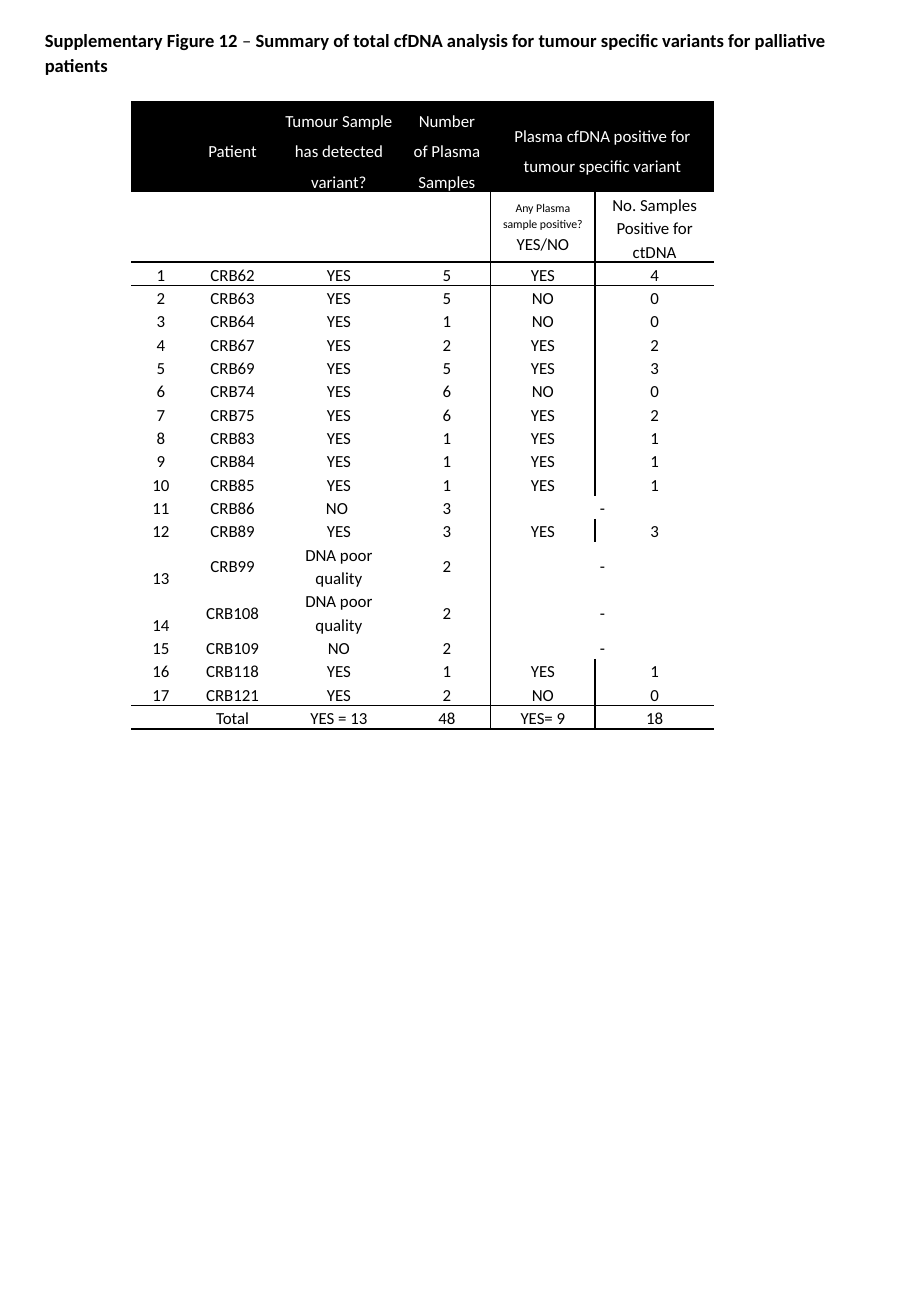
"""Build the supplementary table of cfDNA results for palliative patients."""
from lxml.etree import SubElement
from pptx import Presentation
from pptx.dml.color import RGBColor
from pptx.enum.text import MSO_ANCHOR as Anchor, MSO_AUTO_SIZE as AutoSize, PP_ALIGN as Align
from pptx.oxml.ns import qn
from pptx.util import Inches, Pt

BLACK = RGBColor(0x00, 0x00, 0x00)
WHITE = RGBColor(0xFF, 0xFF, 0xFF)
FONT = "Calibri"
NO_STYLE = "{2D5ABB26-0587-4C30-8999-92F81FD0307C}"

TITLE = [
    ("Supplementary Figure 12 ", True),
    ("– ", False),
    ("Summary of total cfDNA analysis for tumour specific variants for palliative patients", True),
]
COLUMN_WIDTHS = [0.49, 0.69, 1.06, 0.72, 0.86, 0.98]
HEADER_HEIGHT = 0.29
PATIENT_HEIGHT = 0.16
HEADINGS = ["", "Patient", "Tumour Sample has detected variant?",
            "Number of Plasma Samples", "Plasma cfDNA positive for tumour specific variant", None]
SUBHEADINGS = ["", "", "", "", "Any Plasma sample positive?\nYES/NO",
               "No. Samples Positive for ctDNA"]
PATIENTS = [
    ("CRB62", "YES", "5", "YES", "4"),
    ("CRB63", "YES", "5", "NO", "0"),
    ("CRB64", "YES", "1", "NO", "0"),
    ("CRB67", "YES", "2", "YES", "2"),
    ("CRB69", "YES", "5", "YES", "3"),
    ("CRB74", "YES", "6", "NO", "0"),
    ("CRB75", "YES", "6", "YES", "2"),
    ("CRB83", "YES", "1", "YES", "1"),
    ("CRB84", "YES", "1", "YES", "1"),
    ("CRB85", "YES", "1", "YES", "1"),
    ("CRB86", "NO ", "3", "-", None),
    ("CRB89", "YES", "3", "YES", "3"),
    ("CRB99", "DNA poor quality", "2", "-", None),
    ("CRB108", "DNA poor quality", "2", "-", None),
    ("CRB109", "NO", "2", "-", None),
    ("CRB118", "YES", "1", "YES", "1"),
    ("CRB121", "YES", "2", "NO", "0"),
]
TOTALS = ["", "Total", "YES = 13", "48", "YES= 9", "18"]
RESULT_COLUMN = 4


def style_run(run, size, color, bold=False):
    """Set the font of one run."""
    run.font.name = FONT
    run.font.size = Pt(size)
    run.font.color.rgb = color
    run.font.bold = bold


def add_title(slide):
    """Add the figure title."""
    title = slide.shapes.add_textbox(Inches(0.27), Inches(0.16), Inches(6.65), Inches(0.51))
    title.text_frame.word_wrap = True
    title.text_frame.auto_size = AutoSize.SHAPE_TO_FIT_TEXT
    paragraph = title.text_frame.paragraphs[0]
    paragraph.line_spacing = 1.15
    paragraph.space_after = Pt(10)
    for wording, bold in TITLE:
        run = paragraph.add_run()
        run.text = wording
        style_run(run, 11, BLACK, bold)


def add_borders(cell, sides):
    """Draw black one-point borders on the given sides of a cell."""
    properties = cell._tc.get_or_add_tcPr()
    for side in sides:
        line = SubElement(properties, qn(f"a:ln{side}"), w=str(Pt(1)))
        fill = SubElement(line, qn("a:solidFill"))
        SubElement(fill, qn("a:srgbClr"), val=str(BLACK))


def cell_sides(row, column, ruled_rows):
    """Return the bordered sides of a cell in schema order."""
    bordered = {
        "L": column == RESULT_COLUMN,
        "R": column == RESULT_COLUMN - 1,
        "T": row - 1 in ruled_rows,
        "B": row in ruled_rows,
    }
    return [side for side, present in bordered.items() if present]


def fill_cell(cell, wording, row, column):
    """Write and format the text and fill of one cell."""
    is_heading = row == 0
    cell.margin_left = cell.margin_right = Inches(0.07)
    cell.margin_top = cell.margin_bottom = 0
    is_number = column == 0 and row > 1
    cell.vertical_anchor = Anchor.BOTTOM if is_number else Anchor.MIDDLE
    if is_heading:
        cell.fill.solid()
        cell.fill.fore_color.rgb = BLACK
    else:
        cell.fill.background()
    cell.text_frame.text = wording or ""
    for paragraph in cell.text_frame.paragraphs:
        paragraph.alignment = Align.CENTER
        paragraph.line_spacing = 1.5 if is_heading else 1.15
        size = 7 if paragraph.text.startswith("Any Plasma") else 10
        for run in paragraph.runs:
            style_run(run, size, WHITE if is_heading else BLACK)
        if not paragraph.runs:
            SubElement(paragraph._p, qn("a:endParaRPr"), sz=str(size * 100))


def add_results_table(slide):
    """Add the table of patients, samples and totals."""
    numbered = [(str(number), *patient) for number, patient in enumerate(PATIENTS, 1)]
    rows = [HEADINGS, SUBHEADINGS, *numbered, TOTALS]
    ruled_rows = {1, len(rows) - 2, len(rows) - 1}
    frame = slide.shapes.add_table(len(rows), len(COLUMN_WIDTHS), Inches(1.08), Inches(0.83),
                                   Inches(4.8), Inches(4.92))
    table = frame.table
    table.first_row = table.horz_banding = False
    table._tbl.tblPr.find(qn("a:tableStyleId")).text = NO_STYLE
    for column, width in zip(table.columns, COLUMN_WIDTHS):
        column.width = Inches(width)
    for row, wordings in enumerate(rows):
        table.rows[row].height = Inches(HEADER_HEIGHT if row < 2 else PATIENT_HEIGHT)
        for column, wording in enumerate(wordings):
            cell = table.cell(row, column)
            add_borders(cell, cell_sides(row, column, ruled_rows))
            fill_cell(cell, wording, row, column)
        if wordings[-1] is None:
            table.cell(row, RESULT_COLUMN).merge(table.cell(row, RESULT_COLUMN + 1))
    frame.height = Inches(4.92)


def main():
    """Create and save the presentation."""
    presentation = Presentation()
    presentation.slide_width = Inches(7.5)
    presentation.slide_height = Inches(10.83)
    slide = presentation.slides.add_slide(presentation.slide_layouts[6])
    add_title(slide)
    add_results_table(slide)
    presentation.save("out.pptx")


if __name__ == "__main__":
    main()
